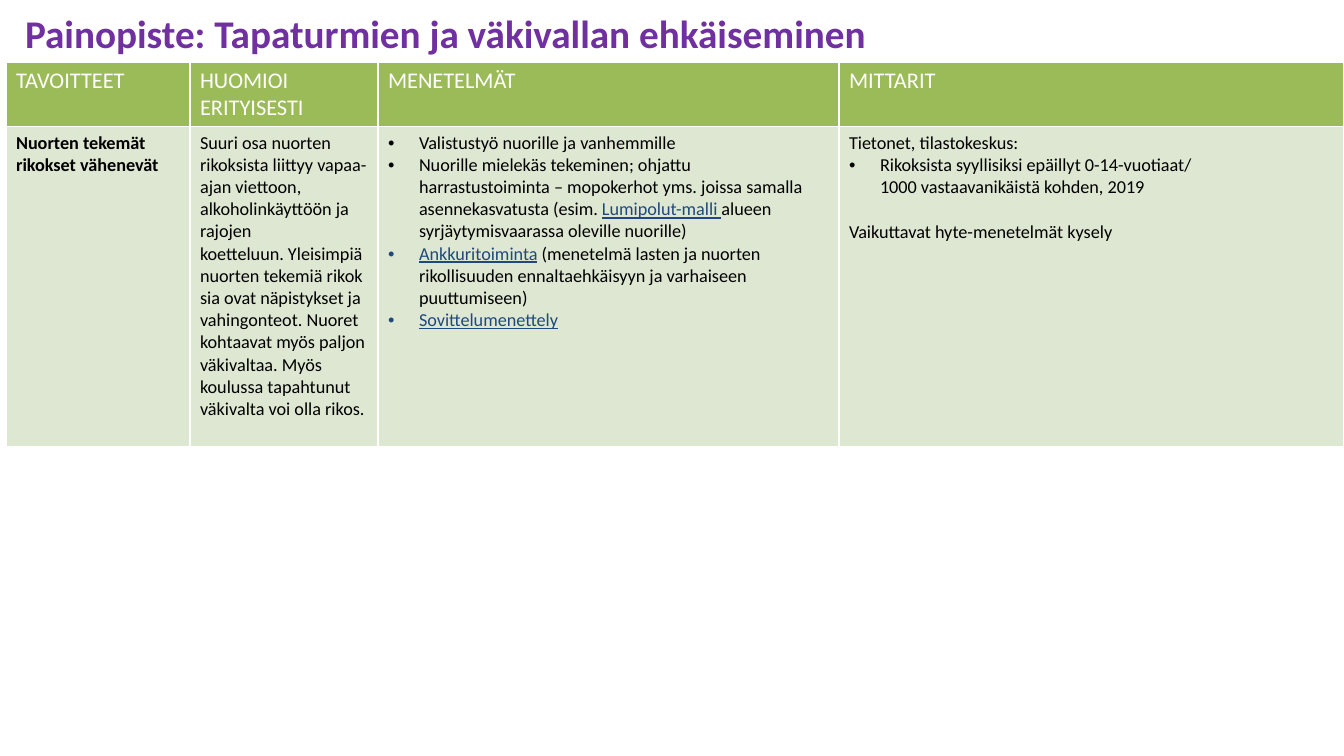
"""Build a slide with a table on preventing accidents and violence among young people."""
from lxml.etree import SubElement
from pptx import Presentation
from pptx.dml.color import RGBColor
from pptx.enum.text import MSO_ANCHOR, MSO_AUTO_SIZE, PP_ALIGN
from pptx.oxml import parse_xml
from pptx.oxml.ns import nsdecls, qn
from pptx.util import Pt

PX = 914400 / 100.8
THEME = {
    "font": "Calibri",
    "title": "7030A0", "header": "9BBB59", "body": "DEE7D1",
    "white": "FFFFFF", "text": "000000", "link": "1F497D",
    "title_size": 28, "header_size": 16, "body_size": 13,
    "border": 1,
}


def px(length):
    """Turn pixels into EMU."""
    return round(length * PX)


def add_span(para, text, color, size, bold=False, underline=False):
    """Add one formatted run; an underscore stands for a non-breaking space."""
    span = para.add_run()
    span.text = text.replace("_", chr(160))
    span.font.name = THEME["font"]
    span.font.size = Pt(THEME[size])
    span.font.color.rgb = RGBColor.from_string(THEME[color])
    span.font.bold = bold
    span.font.underline = underline


deck = Presentation()
deck.slide_width, deck.slide_height = px(1344), px(756)
page = deck.slides.add_slide(deck.slide_layouts[5])

title = page.shapes.title
title.left, title.top, title.width, title.height = px(15), px(8), px(1210), px(50)
title.text_frame.auto_size = MSO_AUTO_SIZE.NONE
title.text_frame.vertical_anchor = MSO_ANCHOR.MIDDLE
title_para = title.text_frame.paragraphs[0]
title_para.alignment = PP_ALIGN.LEFT
add_span(title_para, "Painopiste: Tapaturmien ja väkivallan ehkäiseminen", "title", "title_size", bold=True)

headers = ["TAVOITTEET", "HUOMIOI ERITYISESTI", "MENETELMÄT", "MITTARIT"]
column_widths = [184, 188, 461, 505]
row_heights = [64, 320]

goals = [("plain", [("Nuorten tekemät rikokset vähenevät", "bold")])]
attention = [("plain", [(
    "Suuri osa_nuorten rikoksista_liittyy vapaa-ajan viettoon, alkoholinkäyttöön ja rajojen "
    "koetteluun._Yleisimpiä nuorten_tekemiä_rikoksia_ovat näpistykset ja vahingonteot._Nuoret_"
    "kohtaavat myös paljon väkivaltaa. Myös koulussa tapahtunut väkivalta voi olla_rikos.", "text")])]
methods = [
    ("bullet", [("Valistustyö nuorille ja vanhemmille", "text")]),
    ("bullet", [
        ("Nuorille mielekäs tekeminen; ohjattu harrastustoiminta_– mopokerhot yms. joissa samalla "
         "asennekasvatusta_(esim. ", "text"),
        ("Lumipolut-malli ", "link"),
        ("alueen syrjäytymisvaarassa oleville nuorille)", "text")]),
    ("bullet", [
        ("Ankkuritoiminta", "link"),
        (" (menetelmä lasten ja nuorten rikollisuuden ennaltaehkäisyyn ja varhaiseen puuttumiseen)", "text")]),
    ("bullet", [("Sovittelumenettely", "link")]),
]
measures = [
    ("plain", [("Tietonet, tilastokeskus:", "text")]),
    ("bullet", [("Rikoksista syyllisiksi epäillyt_0-14-vuotiaat/ 1000_vastaavanikäistä_kohden, 2019", "text")]),
    ("spaced", [("Vaikuttavat hyte-menetelmät kysely", "text")]),
]

table = page.shapes.add_table(
    2, 4, px(6), px(62), px(sum(column_widths)), px(sum(row_heights))).table
for column, width in zip(table.columns, column_widths):
    column.width = px(width)
for row, height in zip(table.rows, row_heights):
    row.height = px(height)

for index, header in enumerate(headers):
    add_span(table.cell(0, index).text_frame.paragraphs[0], header, "white", "header_size")

for index, content in enumerate([goals, attention, methods, measures]):
    frame = table.cell(1, index).text_frame
    for number, (kind, spans) in enumerate(content):
        para = frame.add_paragraph() if number else frame.paragraphs[0]
        if kind == "spaced":
            para.space_before = Pt(16)
        if kind == "bullet":
            properties = para._p.get_or_add_pPr()
            properties.set("marL", str(px(31)))
            properties.set("indent", str(px(-31)))
            SubElement(properties, qn("a:buFont"), typeface="Arial")
            SubElement(properties, qn("a:buChar"), char="•")
        for text, style in spans:
            color = "link" if style == "link" else "text"
            add_span(para, text, color, "body_size", style == "bold", style == "link")

for row, fill in zip(table.rows, ["header", "body"]):
    for cell in row.cells:
        cell.fill.solid()
        cell.fill.fore_color.rgb = RGBColor.from_string(THEME[fill])
        for position, side in enumerate(["lnL", "lnR", "lnT", "lnB"]):
            cell._tc.get_or_add_tcPr().insert(position, parse_xml(
                f'<a:{side} {nsdecls("a")} w="{Pt(THEME["border"])}"><a:solidFill>'
                f'<a:srgbClr val="{THEME["white"]}"/></a:solidFill></a:{side}>'))

deck.save("out.pptx")
